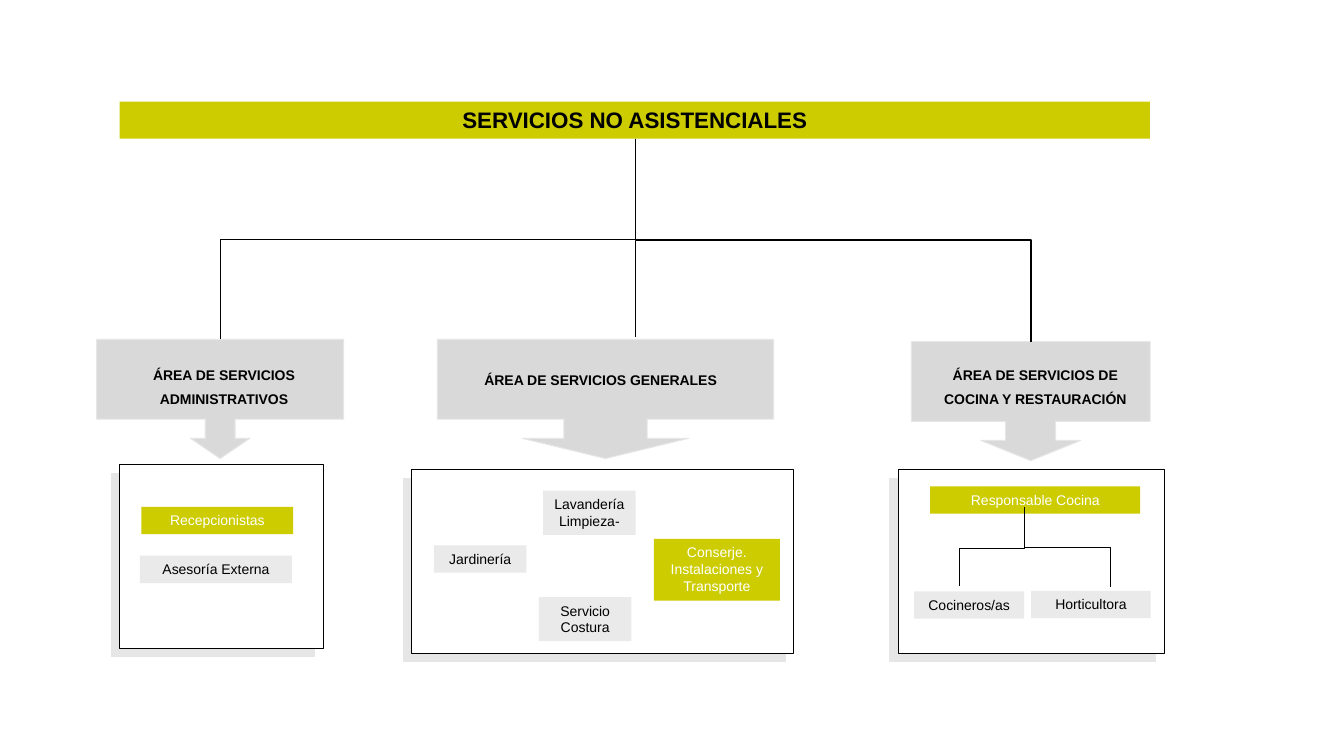
"""Organisation chart of the non-care services and their three areas."""
from lxml.etree import SubElement
from pptx import Presentation
from pptx.dml.color import RGBColor
from pptx.enum.shapes import MSO_CONNECTOR, MSO_SHAPE
from pptx.enum.text import MSO_ANCHOR, MSO_AUTO_SIZE, PP_ALIGN
from pptx.oxml.ns import qn
from pptx.util import Pt

COLORS = {"olive": "CCCC00", "grey": "D9D9D9", "pale": "EAEAEA",
          "edge": "E7E6E6", "black": "000000", "white": "FFFFFF"}


def rgb(name):
    return RGBColor.from_string(COLORS[name])


class OrgChart:
    font_name = "Arial"

    def __init__(self, slide):
        self.shapes = slide.shapes

    def shape(self, kind, place, fill, line=None):
        item = self.shapes.add_shape(kind, *map(Pt, place))
        item.shadow.inherit = False
        item.fill.solid()
        item.fill.fore_color.rgb = rgb(fill)
        if line:
            item.line.color.rgb = rgb(line)
            item.line.width = Pt(0.75)
        else:
            item.line.fill.background()
        return item

    def panel(self, *place):
        frame = self.shape(MSO_SHAPE.RECTANGLE, place, "white", "black")
        effects = frame._element.spPr.find(qn("a:effectLst"))
        shadow = SubElement(effects, qn("a:outerShdw"), dist=str(Pt(8.5)),
                            dir="8100000", algn="ctr", rotWithShape="0")
        SubElement(shadow, qn("a:srgbClr"), val=COLORS["edge"])

    def callout(self, place, adjustments):
        arrow = self.shape(MSO_SHAPE.DOWN_ARROW_CALLOUT, place, "grey", "edge")
        for index, value in enumerate(adjustments):
            arrow.adjustments[index] = value

    def set_text(self, item, text, color="black", size=10, bold=False, spacing=1):
        frame = item.text_frame
        frame.text = text
        frame_format = {"word_wrap": True, "vertical_anchor": MSO_ANCHOR.TOP,
                        "auto_size": MSO_AUTO_SIZE.SHAPE_TO_FIT_TEXT}
        for name, value in frame_format.items():
            setattr(frame, name, value)
        font_format = {"name": self.font_name, "size": Pt(size), "bold": bold}
        for paragraph in frame.paragraphs:
            paragraph.alignment = PP_ALIGN.CENTER
            paragraph.line_spacing = spacing
            for name, value in font_format.items():
                setattr(paragraph.font, name, value)
            paragraph.font.color.rgb = rgb(color)

    def box(self, text, place, fill="pale", color="black", **style):
        item = self.shape(MSO_SHAPE.RECTANGLE, place, fill)
        self.set_text(item, text, color, **style)

    def label(self, text, place):
        self.set_text(self.shapes.add_textbox(*map(Pt, place)), text,
                      bold=True, spacing=1.4)

    def connector(self, kind, ends, width):
        link = self.shapes.add_connector(kind, *map(Pt, ends))
        link.line.color.rgb = rgb("black")
        link.line.width = Pt(width)
        SubElement(link._element.spPr, qn("a:effectLst"))
        return link

    def elbow(self, x1, y1, x2, y2, width=0.75):
        middle_x, middle_y = (x1 + x2) / 2, (y1 + y2) / 2
        to_right = x2 > x1
        half_drop = (y2 - y1) / 2 * (-1 if to_right else 1)
        half_span = abs(x2 - x1) / 2
        link = self.connector(
            MSO_CONNECTOR.ELBOW,
            (middle_x - half_drop, middle_y - half_span,
             middle_x + half_drop, middle_y + half_span), width)
        link._element.spPr.xfrm.set("rot", str((270 if to_right else 90) * 60000))


def main():
    presentation = Presentation()
    presentation.slide_width, presentation.slide_height = Pt(960), Pt(540)
    chart = OrgChart(presentation.slides.add_slide(presentation.slide_layouts[6]))

    areas = [
        ("ÁREA DE SERVICIOS ADMINISTRATIVOS", (85.5, 253.5, 149, 39.5),
         (69, 242.5, 176.5, 85), (0.25, 0.25, 0.17, 0.67), (85.5, 332, 145.5, 131)),
        ("ÁREA DE SERVICIOS GENERALES", (336, 257, 186, 22.5),
         (312.5, 242.5, 240, 85), (0.7, 0.7, 0.17, 0.67), (294, 335.5, 273, 131)),
        ("ÁREA DE SERVICIOS DE COCINA Y RESTAURACIÓN", (664.5, 253.5, 150, 39.5),
         (651, 244, 170.5, 85), (0.42, 0.42, 0.17, 0.67), (641.5, 335.5, 190, 131)),
    ]
    for title, title_place, callout_place, adjustments, panel_place in areas:
        chart.panel(*panel_place)
        chart.callout(callout_place, adjustments)
        chart.label(title, title_place)

    chart.box("SERVICIOS NO ASISTENCIALES", (85.5, 72.5, 736, 26.5), "olive",
              size=16, bold=True)

    leads = [
        ("Recepcionistas", (101, 362, 108.5, 19.5)),
        ("Conserje. Instalaciones y Transporte", (467, 385, 90, 44)),
        ("Responsable Cocina", (664.5, 347.5, 150, 19.5)),
    ]
    for role, place in leads:
        chart.box(role, place, "olive", "white")

    staff = [
        ("Asesoría Externa", (100, 397, 108.5, 19.5)),
        ("Lavandería\nLimpieza-", (388, 350.5, 66, 31.5)),
        ("Jardinería", (310, 389.5, 66, 19.5)),
        ("Servicio Costura", (385, 426.5, 66, 31.5)),
        ("Cocineros/as", (653, 422.5, 78.5, 19.5)),
        ("Horticultora", (736.5, 422, 85.5, 19.5)),
    ]
    for role, place in staff:
        chart.box(role, place)

    chart.elbow(454, 99, 157.5, 242.5)
    chart.elbow(454, 99, 736.5, 244, width=1)
    chart.connector(MSO_CONNECTOR.STRAIGHT, (454, 172, 454, 240.5), 0.5)
    chart.elbow(731.5, 365, 685, 418.5)
    chart.elbow(732, 362, 793.5, 419.5)

    presentation.save("out.pptx")


if __name__ == "__main__":
    main()
